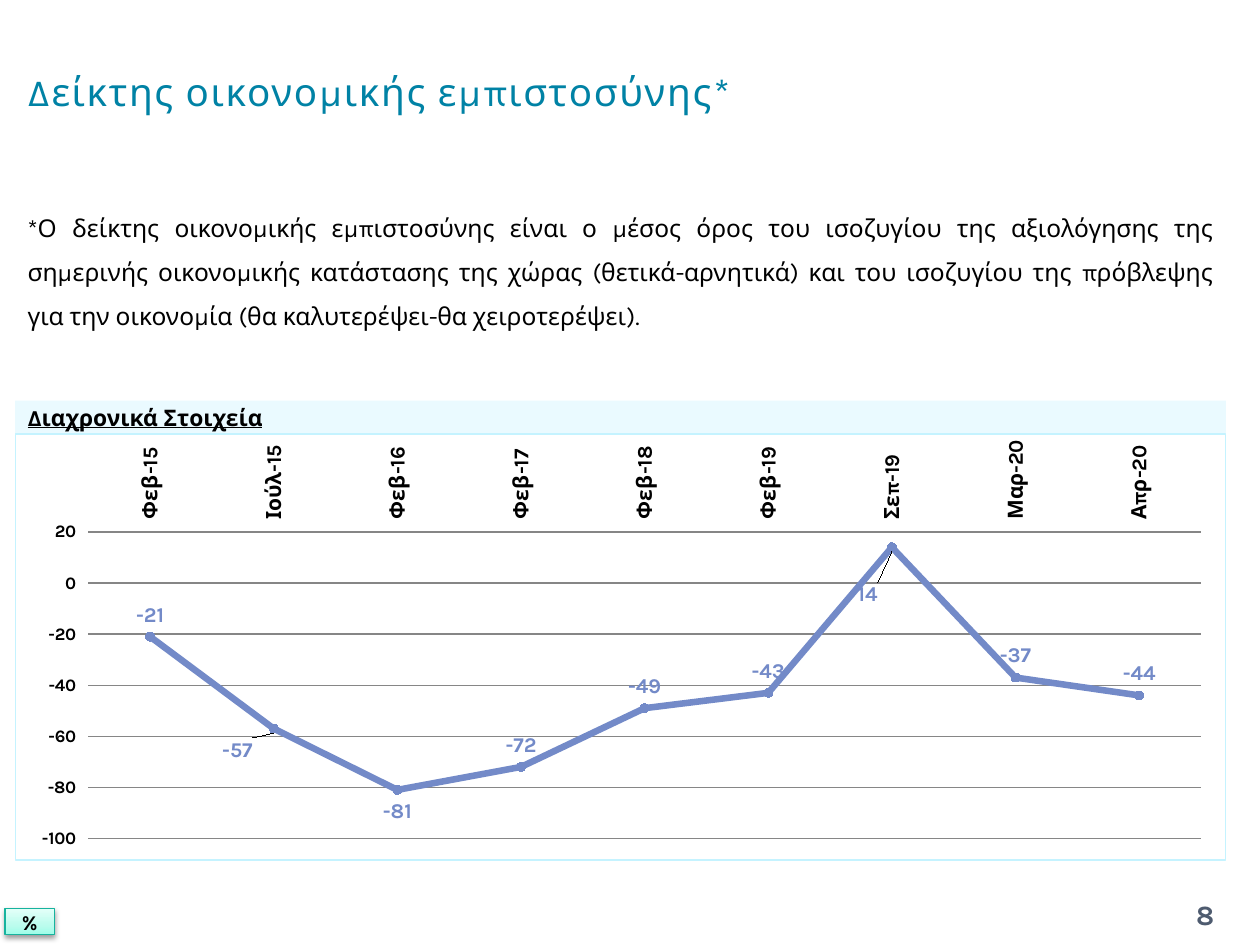
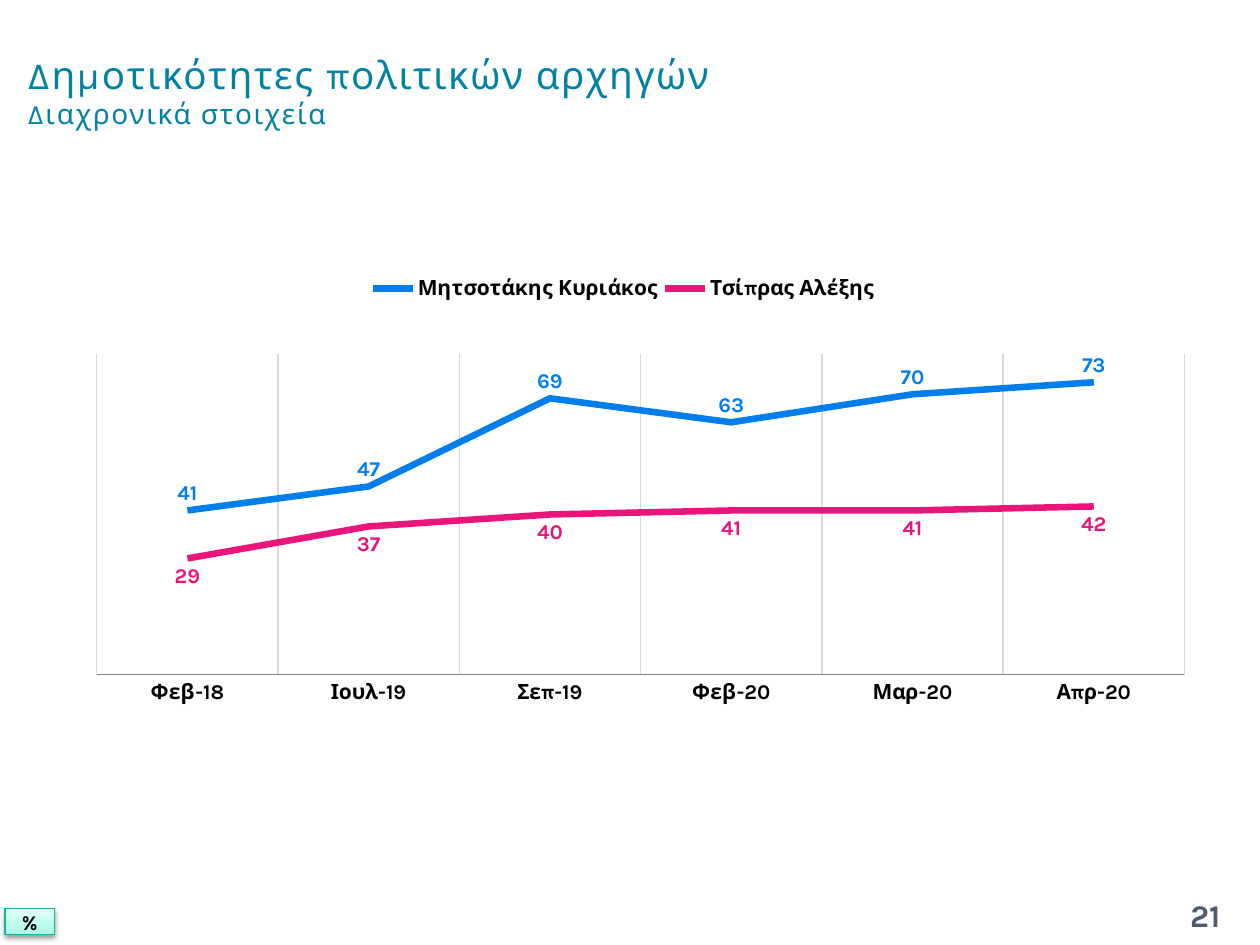
from dataclasses import dataclass
from typing import NamedTuple

import pptx
import pptx.chart.data
import pptx.dml.color
import pptx.enum.chart
import pptx.enum.text
import pptx.oxml
import pptx.oxml.ns
import pptx.util
from pptx.enum.shapes import MSO_SHAPE

FONT = "Karla"
BLACK, TITLE, PAGE = "000000", "0082A5", "4E5B6F"
PALE_BLUE, BADGE_EDGE, AXIS, GRID = "C5F3FF", "16B39E", "868686", "D9D9D9"
PERIWINKLE, BLUE, PINK = "738AC8", "007EEB", "EA157A"
BADGE_STOPS = ((0, "9DFDE8"), (35, "BBFCED"), (100, "E4FFF9"))

COLUMNS, ROWS = 100, 75
CELL = pptx.util.Inches(10) // COLUMNS

ALIGN = pptx.enum.text.PP_ALIGN
LABEL = pptx.enum.chart.XL_LABEL_POSITION
TICK = pptx.enum.chart.XL_TICK_MARK


class Box(NamedTuple):
    """Left, top, width and height in grid cells."""
    left: float
    top: float
    width: float
    height: float

    def emu(self) -> list[int]:
        return [round(cells * CELL) for cells in self]


class Share(NamedTuple):
    """A place inside a chart, as shares of its size."""
    x: float
    y: float
    w: float
    h: float


class LabelShift(NamedTuple):
    point: int
    x: float
    y: float


@dataclass
class Trend:
    name: str
    values: tuple[int, ...]
    colour: str
    label_position: LABEL = LABEL.ABOVE
    shifts: tuple[LabelShift, ...] = ()


@dataclass
class TrendChart:
    box: Box
    months: tuple[str, ...]
    trends: tuple[Trend, ...]
    low: int
    high: int
    step: int
    plot: Share
    markers: bool = False


TITLE_BOX = Box(1.2, 1.3, 68.5, 11.8)
PAGE_BOX = Box(91.7, 70.6, 7.9, 4)
BADGE_BOX = Box(0.4, 72.1, 3.9, 2.1)
NOTE_BOX = Box(1.2, 15.2, 96.1, 11.6)
BAND_BOX = Box(1.2, 31.8, 96.1, 2.6)

CONFIDENCE = TrendChart(
    Box(1.2, 34.4, 96.1, 33.9),
    ("Φεβ-15", "Ιούλ-15", "Φεβ-16", "Φεβ-17", "Φεβ-18", "Φεβ-19",
     "Σεπ-19", "Μαρ-20", "Απρ-20"),
    (Trend("Series 1", (-21, -57, -81, -72, -49, -43, 14, -37, -44), PERIWINKLE,
           shifts=(LabelShift(1, -0.03, 0), LabelShift(2, 0, 0),
                   LabelShift(6, -0.02, 0.06))),),
    -100, 20, 20, Share(0.06, 0.23, 0.92, 0.72), markers=True)

POPULARITY = TrendChart(
    Box(5.9, 20.2, 89, 41.7),
    ("Φεβ-18", "Ιουλ-19", "Σεπ-19", "Φεβ-20", "Μαρ-20", "Απρ-20"),
    (Trend("Μητσοτάκης Κυριάκος", (41, 47, 69, 63, 70, 73), BLUE),
     Trend("Τσίπρας Αλέξης", (29, 37, 40, 41, 41, 42), PINK, LABEL.BELOW)),
    0, 80, 10, Share(0.02, 0.19, 0.97, 0.61))
LEGEND = Share(0.26, 0.03, 0.46, 0.07)


def rgb(colour: str) -> pptx.dml.color.RGBColor:
    return pptx.dml.color.RGBColor.from_string(colour)


def xml(markup: str):
    """Build an element, declaring the namespaces on its root."""
    head, tail = markup.split(">", 1)
    slash = "/" if head.endswith("/") else ""
    return pptx.oxml.parse_xml(
        f"{head.rstrip('/')} {pptx.oxml.ns.nsdecls('a', 'c')}{slash}>{tail}")


def style(font, size: float, colour: str = BLACK, bold: bool = False) -> None:
    font.name, font.size, font.bold = FONT, pptx.util.Pt(size), bold
    font.color.rgb = rgb(colour)


def draw_line(line, colour: str, width: float = 0.75) -> None:
    line.color.rgb = rgb(colour)
    line.width = pptx.util.Pt(width)


def write(shape, text: str, size: float, colour: str = BLACK, bold: bool = False,
          align: ALIGN = ALIGN.LEFT):
    """Fill the shape with one middle-anchored paragraph and return it."""
    frame = shape.text_frame
    frame.text = text
    frame.auto_size = pptx.enum.text.MSO_AUTO_SIZE.NONE
    frame.vertical_anchor = pptx.enum.text.MSO_ANCHOR.MIDDLE
    frame.word_wrap = True
    paragraph = frame.paragraphs[0]
    paragraph.alignment = align
    for run in paragraph.runs:
        style(run.font, size, colour, bold)
    return paragraph


def add_text(slide, box: Box, text: str, size: float, **look):
    return write(slide.shapes.add_textbox(*box.emu()), text, size, **look)


def add_badge(slide) -> None:
    badge = slide.shapes.add_shape(MSO_SHAPE.RECTANGLE, *BADGE_BOX.emu())
    write(badge, "%", 12, bold=True, align=ALIGN.CENTER)
    badge.text_frame.word_wrap = False
    draw_line(badge.line, BADGE_EDGE)
    stops = "".join(f'<a:gs pos="{at * 1000}"><a:srgbClr val="{colour}"/></a:gs>'
                    for at, colour in BADGE_STOPS)
    properties = badge.element.spPr
    properties.insert(2, xml(f'<a:gradFill rotWithShape="1"><a:gsLst>{stops}</a:gsLst>'
                             '<a:lin ang="16200000" scaled="0"/></a:gradFill>'))
    properties.append(xml(
        '<a:effectLst><a:outerShdw blurRad="39370" dist="20320" dir="5400000" '
        'rotWithShape="0"><a:srgbClr val="000000"><a:alpha val="38000"/></a:srgbClr>'
        '</a:outerShdw></a:effectLst>'))


def add_band(slide, heading: str) -> None:
    band = slide.shapes.add_shape(MSO_SHAPE.RECTANGLE, *BAND_BOX.emu())
    band.shadow.inherit = False
    band.fill.solid()
    band.fill.fore_color.rgb = rgb(PALE_BLUE)
    tint = band.element.spPr.find(".//" + pptx.oxml.ns.qn("a:srgbClr"))
    tint.append(xml('<a:alpha val="35000"/>'))
    band.line.fill.background()
    paragraph = write(band, heading + "\t", 13, bold=True)
    paragraph.runs[0].font.underline = True
    stop = round(2.33 * pptx.util.Inches(1))
    paragraph._p.get_or_add_pPr().insert(
        0, xml(f'<a:tabLst><a:tab pos="{stop}" algn="l"/></a:tabLst>'))


def start_slide(deck, title: str, page: str, page_size: float, subtitle: str = ""):
    slide = deck.slides.add_slide(deck.slide_layouts[5])
    heading = slide.shapes.title
    heading.left, heading.top, heading.width, heading.height = TITLE_BOX.emu()
    lines = write(heading, f"{title}\v{subtitle}" if subtitle else title, 22, TITLE)
    for run in lines.runs:
        run.font._element.set("spc", "100")
    if subtitle:
        lines.runs[-1].font.size = pptx.util.Pt(16)
    add_text(slide, PAGE_BOX, page, page_size, colour=PAGE, bold=True, align=ALIGN.CENTER)
    add_badge(slide)
    return slide


def manual_layout(place: Share):
    sides = "".join(f'<c:{side} val="{value}"/>'
                    for side, value in place._asdict().items())
    return xml('<c:layout><c:manualLayout><c:layoutTarget val="inner"/>'
               '<c:xMode val="edge"/><c:yMode val="edge"/>'
               f'{sides}</c:manualLayout></c:layout>')


def format_trend(series, trend: Trend, markers: bool) -> None:
    series.smooth = False
    draw_line(series.format.line, trend.colour, 3.75)
    if markers:
        series.marker.style = pptx.enum.chart.XL_MARKER_STYLE.CIRCLE
        series.marker.size = 5
        series.marker.format.fill.solid()
        series.marker.format.fill.fore_color.rgb = rgb(trend.colour)
        draw_line(series.marker.format.line, trend.colour)
    else:
        series.marker.style = pptx.enum.chart.XL_MARKER_STYLE.NONE
    labels = series.data_labels
    labels.show_value = True
    labels.position = trend.label_position
    style(labels.font, 12, trend.colour, True)
    for shift in trend.shifts:
        label = series.points[shift.point].data_label
        style(label.font, 12, trend.colour, True)
        label.position = LABEL.BELOW
        index = series._element.xpath(f"c:dLbls/c:dLbl/c:idx[@val='{shift.point}']")[0]
        index.addnext(xml(f'<c:layout><c:manualLayout><c:x val="{shift.x}"/>'
                          f'<c:y val="{shift.y}"/></c:manualLayout></c:layout>'))


def add_trend_chart(slide, content: TrendChart):
    data = pptx.chart.data.CategoryChartData(number_format="#,##0")
    data.categories = content.months
    for trend in content.trends:
        data.add_series(trend.name, trend.values)
    kinds = pptx.enum.chart.XL_CHART_TYPE
    kind = kinds.LINE_MARKERS if content.markers else kinds.LINE
    chart = slide.shapes.add_chart(kind, *content.box.emu(), data).chart
    chart.has_title = chart.has_legend = False
    style(chart.font, 18)
    chart.plots[0].vary_by_categories = False
    for series, trend in zip(chart.plots[0].series, content.trends):
        format_trend(series, trend, content.markers)

    months, scale = chart.category_axis, chart.value_axis
    months.major_tick_mark = TICK.NONE
    style(months.tick_labels.font, 12, bold=True)
    draw_line(months.format.line, AXIS)
    scale.minimum_scale, scale.maximum_scale = content.low, content.high
    scale.major_unit = content.step

    area = chart.element.find(".//" + pptx.oxml.ns.qn("c:plotArea"))
    for automatic in area.findall(pptx.oxml.ns.qn("c:layout")):
        area.remove(automatic)
    area.insert(0, manual_layout(content.plot))
    return chart


def build_confidence(deck) -> None:
    slide = start_slide(deck, "Δείκτης οικονομικής εμπιστοσύνης*", "8", 16)
    note = add_text(
        slide, NOTE_BOX,
        "*Ο δείκτης οικονομικής εμπιστοσύνης είναι ο μέσος όρος του ισοζυγίου της "
        "αξιολόγησης της σημερινής οικονομικής κατάστασης της χώρας (θετικά-αρνητικά) "
        "και του ισοζυγίου της πρόβλεψης για την οικονομία "
        "(θα καλυτερέψει-θα χειροτερέψει).", 14, align=ALIGN.JUSTIFY)
    note.line_spacing = 1.5
    chart = add_trend_chart(slide, CONFIDENCE)
    months, scale = chart.category_axis, chart.value_axis
    months.tick_label_position = pptx.enum.chart.XL_TICK_LABEL_POSITION.HIGH
    turned = months._element.xpath("c:txPr/a:bodyPr")[0]
    turned.set("rot", "-5400000")
    turned.set("vert", "horz")
    scale.has_major_gridlines = True
    draw_line(scale.major_gridlines.format.line, AXIS)
    scale.format.line.fill.background()
    style(scale.tick_labels.font, 10, bold=True)
    chart.element.find(pptx.oxml.ns.qn("c:txPr")).addprevious(xml(
        f'<c:spPr><a:noFill/><a:ln w="9525"><a:solidFill><a:srgbClr val="{PALE_BLUE}"/>'
        '</a:solidFill></a:ln></c:spPr>'))
    add_band(slide, "Διαχρονικά Στοιχεία")


def build_popularity(deck) -> None:
    slide = start_slide(deck, "Δημοτικότητες πολιτικών αρχηγών", "21", 18,
                        "Διαχρονικά στοιχεία")
    chart = add_trend_chart(slide, POPULARITY)
    chart.value_axis.visible = False
    chart.value_axis.has_major_gridlines = False
    chart.category_axis.has_major_gridlines = True
    draw_line(chart.category_axis.major_gridlines.format.line, GRID)
    chart.has_legend = True
    chart.legend.position = pptx.enum.chart.XL_LEGEND_POSITION.TOP
    chart.legend.include_in_layout = False
    style(chart.legend.font, 12, bold=True)
    key = chart.legend._element
    for automatic in key.findall(pptx.oxml.ns.qn("c:layout")):
        key.remove(automatic)
    place = manual_layout(LEGEND)
    place[0].remove(place[0][0])
    key.find(pptx.oxml.ns.qn("c:legendPos")).addnext(place)


def main() -> None:
    deck = pptx.Presentation()
    deck.slide_width, deck.slide_height = COLUMNS * CELL, ROWS * CELL
    build_confidence(deck)
    build_popularity(deck)
    deck.save("out.pptx")


if __name__ == "__main__":
    main()
